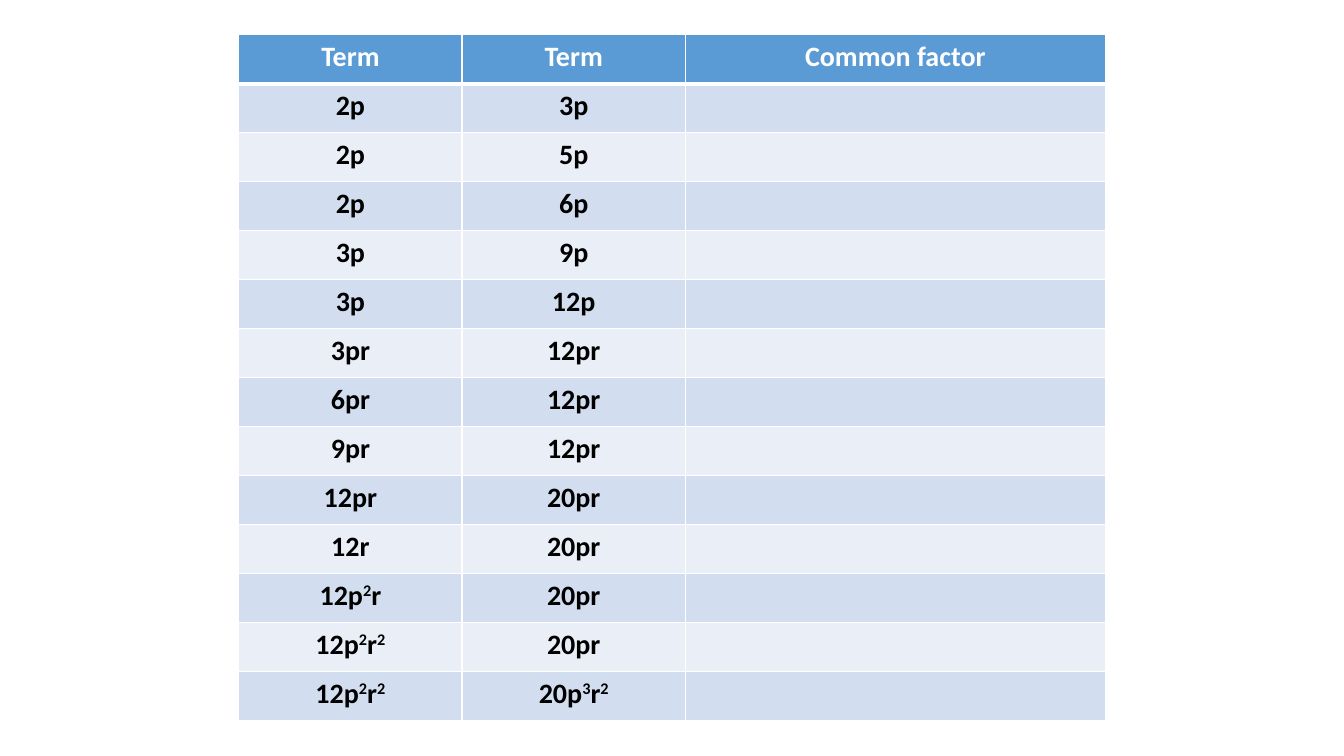
from dataclasses import dataclass

from lxml import etree
from pptx import Presentation
from pptx.dml.color import RGBColor
from pptx.enum.text import PP_ALIGN
from pptx.oxml.ns import qn
from pptx.util import Pt

CENTER = PP_ALIGN.CENTER

HEADINGS = ["Term", "Term", "Common factor"]
# Base and exponent parts alternate within each tuple.
TERM_PAIRS = [
    (("2p",), ("3p",)),
    (("2p",), ("5p",)),
    (("2p",), ("6p",)),
    (("3p",), ("9p",)),
    (("3p",), ("12p",)),
    (("3pr",), ("12pr",)),
    (("6pr",), ("12pr",)),
    (("9pr",), ("12pr",)),
    (("12pr",), ("20pr",)),
    (("12r",), ("20pr",)),
    (("12p", "2", "r"), ("20pr",)),
    (("12p", "2", "r", "2"), ("20pr",)),
    (("12p", "2", "r", "2"), ("20p", "3", "r", "2")),
]
COLUMN_WIDTHS = [159.5, 159.5, 300]
ROW_HEIGHT = 35
TABLE_LEFT, TABLE_TOP = 170.6, 24.8


@dataclass(frozen=True)
class Theme:
    font: str = "Calibri"
    text_size: int = 20
    header_fill: str = "5B9BD5"
    band_fills: tuple = ("D2DEEF", "EAEFF7")
    header_text: str = "FFFFFF"
    body_text: str = "000000"
    border: str = "FFFFFF"
    thin_border: int = 1
    header_border: int = 3


THEME = Theme()


def set_borders(cell, top, bottom):
    properties = cell._tc.get_or_add_tcPr()
    sides = {"lnL": THEME.thin_border, "lnR": THEME.thin_border, "lnT": top, "lnB": bottom}
    for position, (side, width) in enumerate(sides.items()):
        line = etree.Element(qn(f"a:{side}"), w=str(Pt(width)))
        fill = etree.SubElement(line, qn("a:solidFill"))
        etree.SubElement(fill, qn("a:srgbClr"), val=THEME.border)
        properties.insert(position, line)


def write_term(cell, parts, color):
    paragraph = cell.text_frame.paragraphs[0]
    paragraph.alignment = CENTER
    for index, part in enumerate(parts):
        run = paragraph.add_run()
        run.text = part
        run.font.name = THEME.font
        run.font.size = Pt(THEME.text_size)
        run.font.bold = True
        run.font.color.rgb = RGBColor.from_string(color)
        if index % 2:
            run.font._element.set("baseline", "30000")


def add_factor_table(slide):
    rows = [[(heading,) for heading in HEADINGS]]
    rows += [[*pair, ()] for pair in TERM_PAIRS]
    table = slide.shapes.add_table(
        len(rows), len(HEADINGS), Pt(TABLE_LEFT), Pt(TABLE_TOP),
        Pt(sum(COLUMN_WIDTHS)), Pt(ROW_HEIGHT * len(rows)),
    ).table
    for column, width in zip(table.columns, COLUMN_WIDTHS):
        column.width = Pt(width)
    for row_index, row in enumerate(rows):
        table.rows[row_index].height = Pt(ROW_HEIGHT)
        is_header = row_index == 0
        fill = THEME.header_fill if is_header else THEME.band_fills[(row_index - 1) % 2]
        color = THEME.header_text if is_header else THEME.body_text
        top = THEME.header_border if row_index == 1 else THEME.thin_border
        bottom = THEME.header_border if is_header else THEME.thin_border
        for column_index, parts in enumerate(row):
            cell = table.cell(row_index, column_index)
            cell.fill.solid()
            cell.fill.fore_color.rgb = RGBColor.from_string(fill)
            set_borders(cell, top, bottom)
            write_term(cell, parts, color)


def main():
    presentation = Presentation()
    presentation.slide_width, presentation.slide_height = Pt(960), Pt(540)
    slide = presentation.slides.add_slide(presentation.slide_layouts[6])
    add_factor_table(slide)
    presentation.save("out.pptx")


if __name__ == "__main__":
    main()
